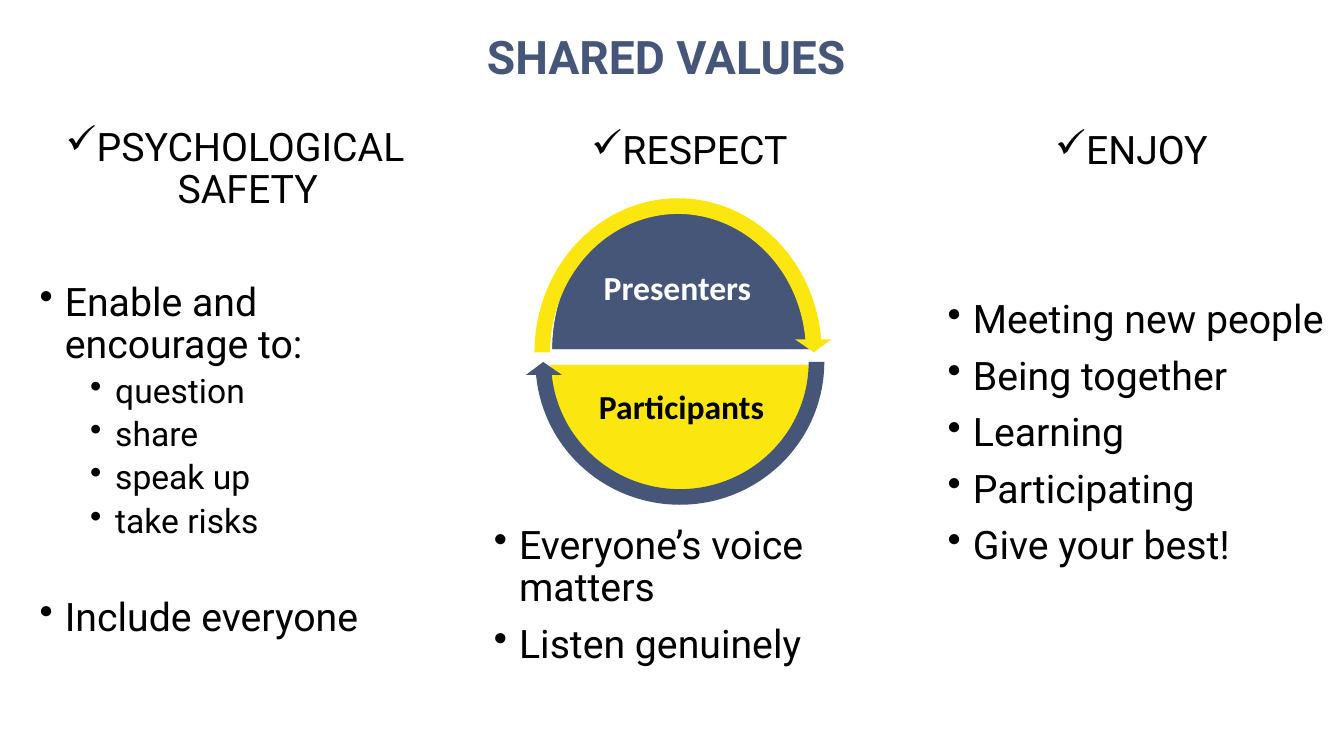
from pptx import Presentation
from pptx import util as u
from pptx.dml.color import RGBColor
from pptx.enum import shapes, text
from pptx.oxml.ns import qn
from lxml import etree

PX = 9525
COLOURS = {"navy": "465678", "yellow": "FBE70F", "white": "FFFFFF", "black": "000000"}
BODY_SIZE, SUB_SIZE = 56, 48
BODY_GAP, SUB_GAP = 20, 10
HANG = 48


def px(value):
    return u.Emu(value * PX)


def colour(name):
    return RGBColor.from_string(COLOURS[name])


def gap_after_lines(count, size=BODY_SIZE, gap=BODY_GAP):
    return round(BODY_GAP + count * (gap + 1.08 * size), 1)


class SlideBuilder:
    def __init__(self, slide):
        self.slide = slide
        self.font = "Roboto"

    def style(self, paragraph, size, colour_name, bold=False, font=None):
        for run in paragraph.runs:
            run.font.name = font or self.font
            run.font.size = u.Pt(size)
            run.font.bold = bold
            run.font.color.rgb = colour(colour_name)

    def text_box(self, left, top, width, height):
        shape = self.slide.shapes.add_textbox(px(left), px(top), px(width), px(height))
        shape.text_frame.word_wrap = True
        return shape.text_frame

    def title(self, wording, left, top, width, height):
        frame = self.text_box(left, top, width, height)
        frame.margin_left = frame.margin_top = frame.margin_bottom = 0
        frame.margin_right = px(22)
        frame.text = wording
        paragraph = frame.paragraphs[0]
        paragraph.alignment = text.PP_ALIGN.CENTER
        paragraph.line_spacing = 0.9
        self.style(paragraph, 66, "navy", bold=True)

    def bullet(self, paragraph, wording, symbol="•", level=0):
        paragraph.text = wording
        paragraph.level = level
        paragraph.line_spacing = 0.9
        properties = paragraph._p.get_or_add_pPr()
        properties.set("marL", str(px(HANG * (1 + 2 * level))))
        properties.set("indent", str(px(-HANG)))
        etree.SubElement(properties, qn("a:buChar")).set("char", symbol)
        self.style(paragraph, SUB_SIZE if level else BODY_SIZE, "black")

    def column(self, heading, items, left, top, height):
        frame = self.text_box(left, top, 764, height)
        paragraph = frame.paragraphs[0]
        self.bullet(paragraph, heading, "✓")
        paragraph.alignment = text.PP_ALIGN.CENTER
        for wording, level, gap in items:
            paragraph = frame.add_paragraph()
            self.bullet(paragraph, wording, level=level)
            paragraph.space_before = u.Pt(gap)

    def arc_shape(self, kind, left, top, width, height, adjustments, fill, outlined=False):
        shape = self.slide.shapes.add_shape(kind, px(left), px(top), px(width), px(height))
        shape.rotation = 90
        shape.shadow.inherit = False
        for index, value in enumerate(adjustments):
            shape.adjustments[index] = value
        shape.fill.solid()
        shape.fill.fore_color.rgb = colour(fill)
        if outlined:
            shape.line.color.rgb = colour("white")
            shape.line.width = u.Pt(1)
        else:
            shape.line.fill.background()

    def label(self, wording, left, top, width, colour_name):
        frame = self.text_box(left, top, width, 87)
        frame.auto_size = text.MSO_AUTO_SIZE.SHAPE_TO_FIT_TEXT
        frame.text = wording
        self.style(frame.paragraphs[0], 48, colour_name, bold=True, font="Calibri")


def main():
    presentation = Presentation()
    presentation.slide_width, presentation.slide_height = px(2559), px(1440)
    builder = SlideBuilder(presentation.slides.add_slide(presentation.slide_layouts[6]))

    builder.title("SHARED VALUES", 66, 66, 2427, 171)

    actions = ["question", "share", "speak up", "take risks"]
    safety = [("Enable and encourage to:", 0, gap_after_lines(1))]
    safety += [(action, 1, SUB_GAP) for action in actions]
    safety += [("Include everyone", 0, gap_after_lines(1, SUB_SIZE, SUB_GAP))]
    builder.column("PSYCHOLOGICAL SAFETY", safety, 66, 238, 1059)

    pleasures = ["Being together", "Learning", "Participating", "Give your best!"]
    enjoy = [("Meeting new people", 0, gap_after_lines(2))]
    enjoy += [(pleasure, 0, BODY_GAP) for pleasure in pleasures]
    builder.column("ENJOY\t", enjoy, 1795, 245, 1013)

    respect = [
        ("Everyone’s voice matters", 0, gap_after_lines(6)),
        ("Listen genuinely", 0, BODY_GAP),
    ]
    builder.column("RESPECT", respect, 931, 245, 1059)

    pie, arrow = shapes.MSO_SHAPE.PIE, shapes.MSO_SHAPE.CIRCULAR_ARROW
    builder.arc_shape(pie, 1047, 446, 496, 496, [162, 54], "yellow", outlined=True)
    builder.arc_shape(pie, 1015, 418, 567, 496, [54, 162], "navy", outlined=True)
    builder.arc_shape(arrow, 1003, 395, 583, 589, [0.051, 3.275, 50.725, 162, 0.059], "navy")
    builder.arc_shape(arrow, 978, 378, 626, 586, [0.051, 3.275, 158.725, 54, 0.059], "yellow")

    builder.label("Presenters", 1140, 503, 325, "white")
    builder.label("Participants", 1131, 731, 352, "black")

    presentation.save("out.pptx")


if __name__ == "__main__":
    main()
